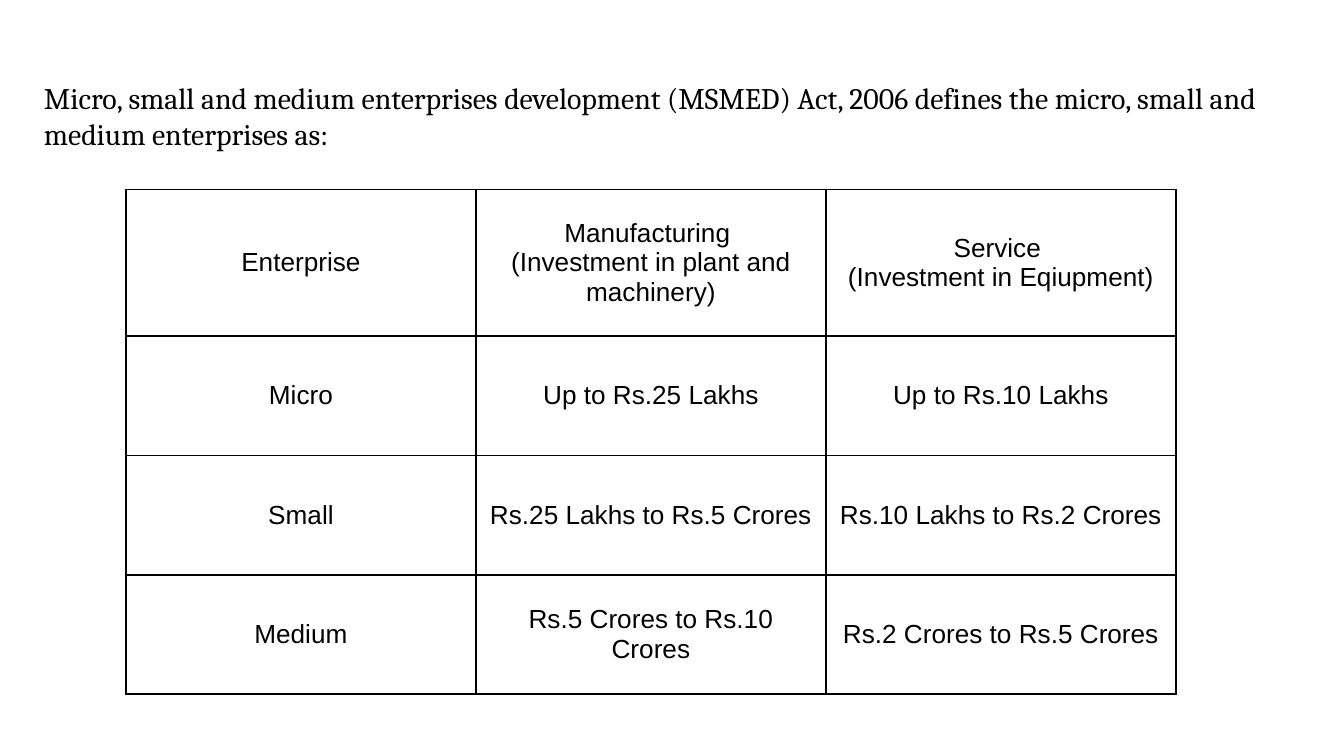
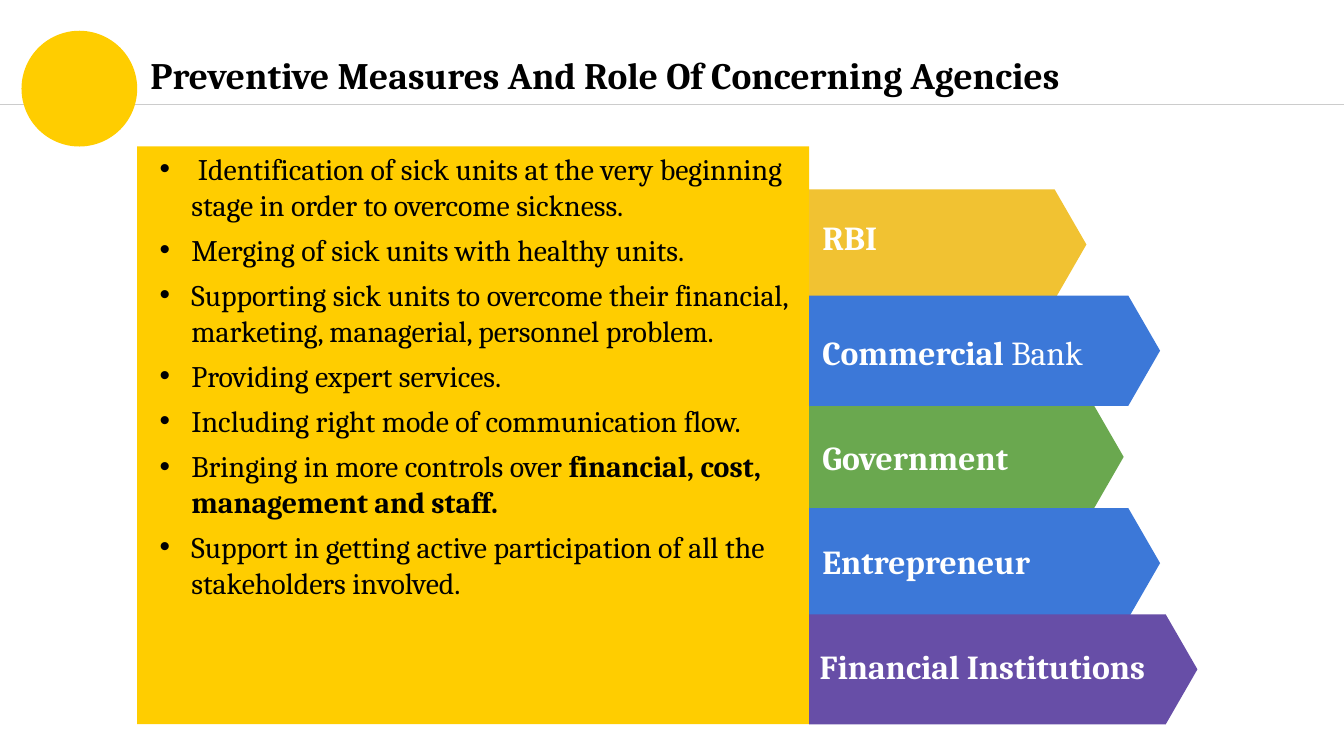
from lxml.etree import SubElement
from pptx import Presentation
from pptx.dml.color import RGBColor
from pptx.enum.shapes import MSO_CONNECTOR, MSO_SHAPE
from pptx.enum.text import MSO_ANCHOR, MSO_AUTO_SIZE, PP_ALIGN
from pptx.oxml.ns import qn
from pptx.util import Pt

BLACK = RGBColor(0x00, 0x00, 0x00)
WHITE = RGBColor(0xFF, 0xFF, 0xFF)
GREY = RGBColor(0xCC, 0xCC, 0xCC)
YELLOW = RGBColor(0xFF, 0xCD, 0x00)
GOLD = RGBColor(0xF1, 0xC2, 0x32)
BLUE = RGBColor(0x3C, 0x78, 0xD8)
GREEN = RGBColor(0x6A, 0xA8, 0x4F)
PURPLE = RGBColor(0x67, 0x4E, 0xA7)
SERIF, SANS = "Cambria", "Arial"

INTRO = ("Micro, small and medium enterprises development (MSMED) Act, 2006 "
         "defines the micro, small and medium enterprises as:")
# Each cell is a list of paragraphs.
LIMITS = [
    [["Enterprise"],
     ["Manufacturing ", "(Investment in plant and machinery)"],
     ["Service ", "(Investment in Eqiupment)"]],
    [["Micro"], ["Up to Rs.25 Lakhs"], ["Up to Rs.10 Lakhs"]],
    [["Small"], ["Rs.25 Lakhs to Rs.5 Crores"], ["Rs.10 Lakhs to Rs.2 Crores"]],
    [["Medium"], ["Rs.5 Crores to Rs.10 Crores"], ["Rs.2 Crores to Rs.5 Crores"]],
]
COL_WIDTH, ROW_HEIGHTS = 187.5, (78.5, 64, 64, 64)

TITLE = "Preventive Measures And Role Of Concerning Agencies"
# Each paragraph is a list of (text, bold) runs.
MEASURES = [
    [(" Identification of sick units at the very beginning stage in order to "
      "overcome sickness.", False)],
    [("Merging of sick units with healthy units.", False)],
    [("Supporting sick units to overcome their financial, marketing, "
      "managerial, personnel problem.", False)],
    [("Providing expert services.", False)],
    [("Including right mode of communication flow.", False)],
    [("Bringing in more controls over ", False),
     ("financial, cost, management and staff.", True)],
    [("Support in getting active participation of all the stakeholders "
      "involved.", False)],
]
# Back to front: row, tip x, colour, label runs, label left, top, width, height
AGENCIES = [
    (0, 582, GOLD, [("RBI", True)], 433.5, 112.5, 46, 29),
    (2, 602, GREEN, [("Government", True)], 433.5, 230.5, 124, 51),
    (3, 621.5, BLUE, [("Entrepreneur", True)], 433.5, 286, 134, 29),
    (4, 641.5, PURPLE, [("Financial Institutions", True)], 432, 342.5, 202, 51),
    (1, 621.5, BLUE, [("Commercial", True), (" Bank", False)], 433.5, 174.5, 168, 51),
]
ARROW_LEFT, ARROW_TOP, ARROW_STEP = 433.5, 101.5, 56.9
ARROW_HEIGHT, TIP_DEPTH = 59, 17


def add_runs(p, runs, size, color=BLACK, font=SERIF):
    for text, bold in runs:
        r = p.add_run()
        r.text = text
        r.font.name, r.font.size, r.font.bold = font, Pt(size), bold
        r.font.color.rgb = color


def add_text(s, box, paragraphs, size, color=BLACK, anchor=MSO_ANCHOR.TOP,
             inset=7.2, wrap=True):
    tf = s.shapes.add_textbox(*map(Pt, box)).text_frame
    tf.word_wrap, tf.vertical_anchor = wrap, anchor
    tf.margin_left = tf.margin_right = Pt(7.2)
    tf.margin_top = tf.margin_bottom = Pt(inset)
    for i, runs in enumerate(paragraphs):
        p = tf.add_paragraph() if i else tf.paragraphs[0]
        add_runs(p, runs, size, color)
    return tf


def paint(shape, color):
    shape.shadow.inherit = False
    shape.fill.solid()
    shape.fill.fore_color.rgb = color
    shape.line.fill.background()


def add_bullet(p, indent=17):
    pPr = p._p.get_or_add_pPr()
    pPr.set("marL", str(Pt(indent)))
    pPr.set("indent", str(-Pt(indent)))
    color = SubElement(pPr, qn("a:buClr"))
    SubElement(color, qn("a:srgbClr"), val=str(BLACK))
    SubElement(pPr, qn("a:buFont"), typeface=SANS)
    SubElement(pPr, qn("a:buChar"), char="•")


def add_borders(cell):
    tcPr = cell._tc.get_or_add_tcPr()
    for i, side in enumerate(("lnL", "lnR", "lnT", "lnB")):
        ln = tcPr.makeelement(qn(f"a:{side}"), {"w": str(Pt(1))})
        fill = SubElement(ln, qn("a:solidFill"))
        SubElement(fill, qn("a:srgbClr"), val=str(BLACK))
        tcPr.insert(i, ln)


def fill_cell(cell, lines):
    cell.fill.background()
    cell.vertical_anchor = MSO_ANCHOR.MIDDLE
    cell.margin_left = cell.margin_right = Pt(7.2)
    cell.margin_top = cell.margin_bottom = Pt(5)
    tf = cell.text_frame
    for i, line in enumerate(lines):
        p = tf.add_paragraph() if i else tf.paragraphs[0]
        p.alignment = PP_ALIGN.CENTER
        add_runs(p, [(line, False)], 14, font=SANS)
    add_borders(cell)


def build_definition(s):
    add_text(s, (16.5, 44.5, 703.5, 34.5), [[(INTRO, False)]], 16,
             anchor=MSO_ANCHOR.MIDDLE)
    columns = len(LIMITS[0])
    table = s.shapes.add_table(len(LIMITS), columns, Pt(67.5), Pt(101.5),
                               Pt(COL_WIDTH * columns), Pt(sum(ROW_HEIGHTS))).table
    table.first_row = table.horz_banding = False
    for column in table.columns:
        column.width = Pt(COL_WIDTH)
    for row, height, texts in zip(table.rows, ROW_HEIGHTS, LIMITS):
        row.height = Pt(height)
        for cell, lines in zip(row.cells, texts):
            fill_cell(cell, lines)


def add_arrow(s, row, tip, color):
    top = ARROW_TOP + row * ARROW_STEP
    middle, bottom = top + ARROW_HEIGHT / 2, top + ARROW_HEIGHT
    shoulder = tip - TIP_DEPTH
    outline = [(shoulder, top), (tip, middle), (shoulder, bottom), (ARROW_LEFT, bottom)]
    fb = s.shapes.build_freeform(Pt(ARROW_LEFT), Pt(top))
    fb.add_line_segments([(Pt(x), Pt(y)) for x, y in outline])
    paint(fb.convert_to_shape(), color)


def build_measures(s):
    panel = s.shapes.add_shape(MSO_SHAPE.RECTANGLE, Pt(73.5), Pt(78.5), Pt(360), Pt(309.5))
    paint(panel, YELLOW)
    add_text(s, (73.5, 22.5, 607.5, 34.5), [[(TITLE, True)]], 20,
             anchor=MSO_ANCHOR.MIDDLE)
    tf = add_text(s, (78.5, 73.5, 354, 298), MEASURES, 16)
    for p in tf.paragraphs:
        p.space_before = Pt(5)
        add_bullet(p)

    for row, tip, color, *_ in AGENCIES:
        add_arrow(s, row, tip, color)
    for _, _, _, label, *box in AGENCIES:
        tf = add_text(s, box, [label], 18, WHITE, inset=3.6, wrap=False)
        tf.auto_size = MSO_AUTO_SIZE.SHAPE_TO_FIT_TEXT

    rule = s.shapes.add_connector(MSO_CONNECTOR.STRAIGHT, Pt(0), Pt(56), Pt(720), Pt(56))
    rule.line.color.rgb, rule.line.width = GREY, Pt(0.75)
    SubElement(rule._element.spPr, qn("a:effectLst"))
    paint(s.shapes.add_shape(MSO_SHAPE.OVAL, Pt(11.5), Pt(16.5), Pt(62), Pt(62)), YELLOW)


def main():
    prs = Presentation()
    prs.slide_width, prs.slide_height = Pt(720), Pt(405)
    for build in (build_definition, build_measures):
        build(prs.slides.add_slide(prs.slide_layouts[6]))
    prs.save("out.pptx")


if __name__ == "__main__":
    main()
